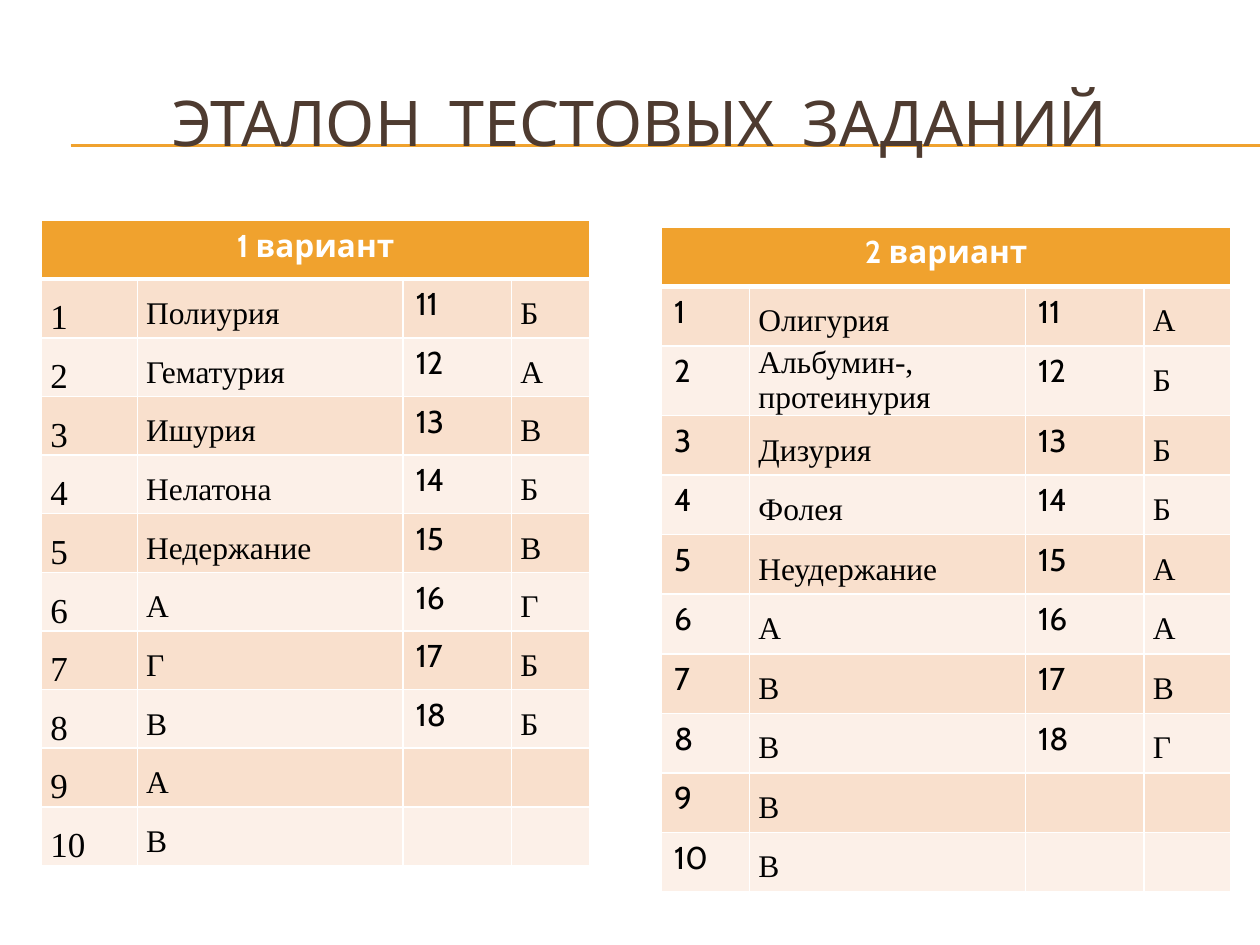
from lxml.etree import SubElement
from pptx import Presentation
from pptx.dml.color import RGBColor
from pptx.enum.shapes import MSO_CONNECTOR
from pptx.enum.text import MSO_ANCHOR, PP_ALIGN
from pptx.oxml import parse_xml
from pptx.oxml.ns import nsdecls, qn
from pptx.util import Inches, Pt

ORANGE = RGBColor(0xF0, 0xA2, 0x2E)
BROWN = RGBColor(0x4E, 0x3B, 0x30)
PEACH = RGBColor(0xF9, 0xE0, 0xCD)
CREAM = RGBColor(0xFC, 0xF0, 0xE8)
WHITE = RGBColor(0xFF, 0xFF, 0xFF)
BLACK = RGBColor(0, 0, 0)
SANS, SERIF = "Cabin", "Times New Roman"

TERMS_1 = ["Полиурия", "Гематурия", "Ишурия", "Нелатона", "Недержание", *"АГВАВ"]
TERMS_2 = ["Олигурия", "Альбумин-, протеинурия", "Дизурия", "Фолея",
           "Неудержание", *"АВВВВ"]
LETTERS_1, LETTERS_2 = "БАВБВГББ", "АБББААВГ"


class AnswerSlide:
    """A slide on a grid of 100 columns by 75 rows."""

    COLS, ROWS = 100, 75

    def __init__(self, prs):
        self.col = prs.slide_width / self.COLS
        self.row = prs.slide_height / self.ROWS
        self.s = prs.slides.add_slide(prs.slide_layouts[5])

    def x(self, cols):
        return round(cols * self.col)

    def y(self, rows):
        return round(rows * self.row)

    def add_text(self, p, text, size, font, color, bold=False):
        r = p.add_run()
        r.text = text
        f = r.font
        f.size, f.name, f.bold = Pt(size), font, bold
        f.color.rgb = color

    def rule(self, left, right, top):
        line = self.s.shapes.add_connector(
            MSO_CONNECTOR.STRAIGHT, self.x(left), self.y(top), self.x(right), self.y(top))
        line.line.color.rgb = ORANGE
        line.line.width = Pt(0.75)
        SubElement(line._element.spPr, qn("a:effectLst"))

    def title(self, text, left, top, width, height):
        sp = self.s.shapes.title
        sp.left, sp.top = self.x(left), self.y(top)
        sp.width, sp.height = self.x(width), self.y(height)
        tf = sp.text_frame
        tf.vertical_anchor = MSO_ANCHOR.MIDDLE
        p = tf.paragraphs[0]
        p.alignment = PP_ALIGN.CENTER
        self.add_text(p, text, 36, SANS, BROWN)
        self.s.shapes._spTree.append(sp._element)  # in front of the rules

    def paint(self, cell, fill, bottom=1):
        """Fill a cell and give it white borders, widths in points."""
        tcPr = cell._tc.get_or_add_tcPr()
        for side, width in (("L", 1), ("R", 1), ("T", 1), ("B", bottom)):
            tcPr.append(parse_xml(
                f'<a:ln{side} {nsdecls("a")} w="{Pt(width)}"><a:solidFill>'
                f'<a:srgbClr val="{WHITE}"/></a:solidFill></a:ln{side}>'))
        cell.fill.solid()
        cell.fill.fore_color.rgb = fill

    def serif_cell(self, cell, text, size=18, spacing=1.5, hanging=0):
        cell.margin_left = cell.margin_right = Inches(0.07)
        cell.margin_top = cell.margin_bottom = 0
        p = cell.text_frame.paragraphs[0]
        p.line_spacing = spacing
        if hanging:
            pPr = p._p.get_or_add_pPr()
            pPr.set("marL", str(Inches(hanging)))
            pPr.set("indent", str(-Inches(hanging)))
        self.add_text(p, text, size, SERIF, BLACK)

    def sans_cell(self, cell, text):
        self.add_text(cell.text_frame.paragraphs[0], text, 18, SANS, BLACK)

    def answers(self, heading, terms, letters, left, top, widths, height,
                serif_numbers=False):
        """Terms numbered from 1 on the left, letters numbered on from them."""
        n = len(terms) + 1
        table = self.s.shapes.add_table(
            n, len(widths), self.x(left), self.y(top),
            self.x(sum(widths)), self.y(height)).table
        for column, width in zip(table.columns, widths):
            column.width = self.x(width)
        for i, row in enumerate(table.rows):
            row.height = self.y(height / n)
            for cell in row.cells:
                if i == 0:
                    self.paint(cell, ORANGE, bottom=3)
                else:
                    self.paint(cell, PEACH if i % 2 else CREAM)

        head = table.cell(0, 0)
        head.merge(table.cell(0, len(widths) - 1))
        p = head.text_frame.paragraphs[0]
        p.alignment = PP_ALIGN.CENTER
        self.add_text(p, heading, 18, SANS, WHITE, bold=True)

        for i, term in enumerate(terms, 1):
            if serif_numbers:
                self.serif_cell(table.cell(i, 0), str(i), size=20, hanging=0.38)
            else:
                self.sans_cell(table.cell(i, 0), str(i))
            two_lines = " " in term
            self.serif_cell(table.cell(i, 1), term, spacing=1 if two_lines else 1.5)
        for i, letter in enumerate(letters, 1):
            self.sans_cell(table.cell(i, 2), str(len(terms) + i))
            self.serif_cell(table.cell(i, 3), letter)


def main():
    prs = Presentation()
    prs.slide_width, prs.slide_height = Inches(10), Inches(7.5)
    slide = AnswerSlide(prs)
    for top in (11.5, 11.6):
        slide.rule(5.6, 100, top)
    slide.title("ЭТАЛОН  ТЕСТОВЫХ  ЗАДАНИЙ", 3.3, 5, 95, 9.2)
    slide.answers("1 вариант", TERMS_1, LETTERS_1, 3.3, 17.5,
                  (7.6, 21.1, 8.6, 6.2), 51.2, serif_numbers=True)
    slide.answers("2 вариант", TERMS_2, LETTERS_2, 52.5, 18,
                  (7, 21.9, 9.4, 6.9), 52)
    prs.save("out.pptx")


if __name__ == "__main__":
    main()
